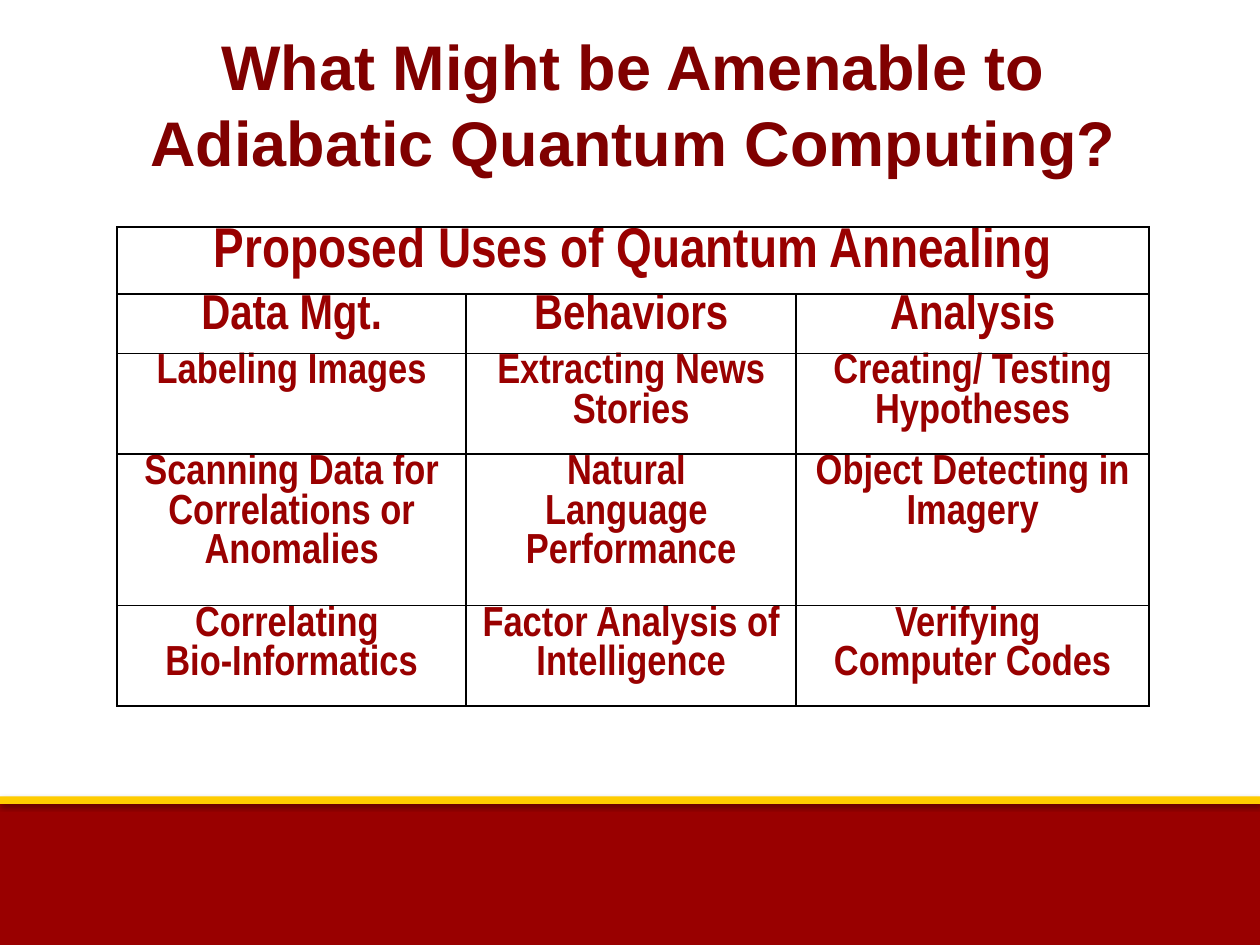
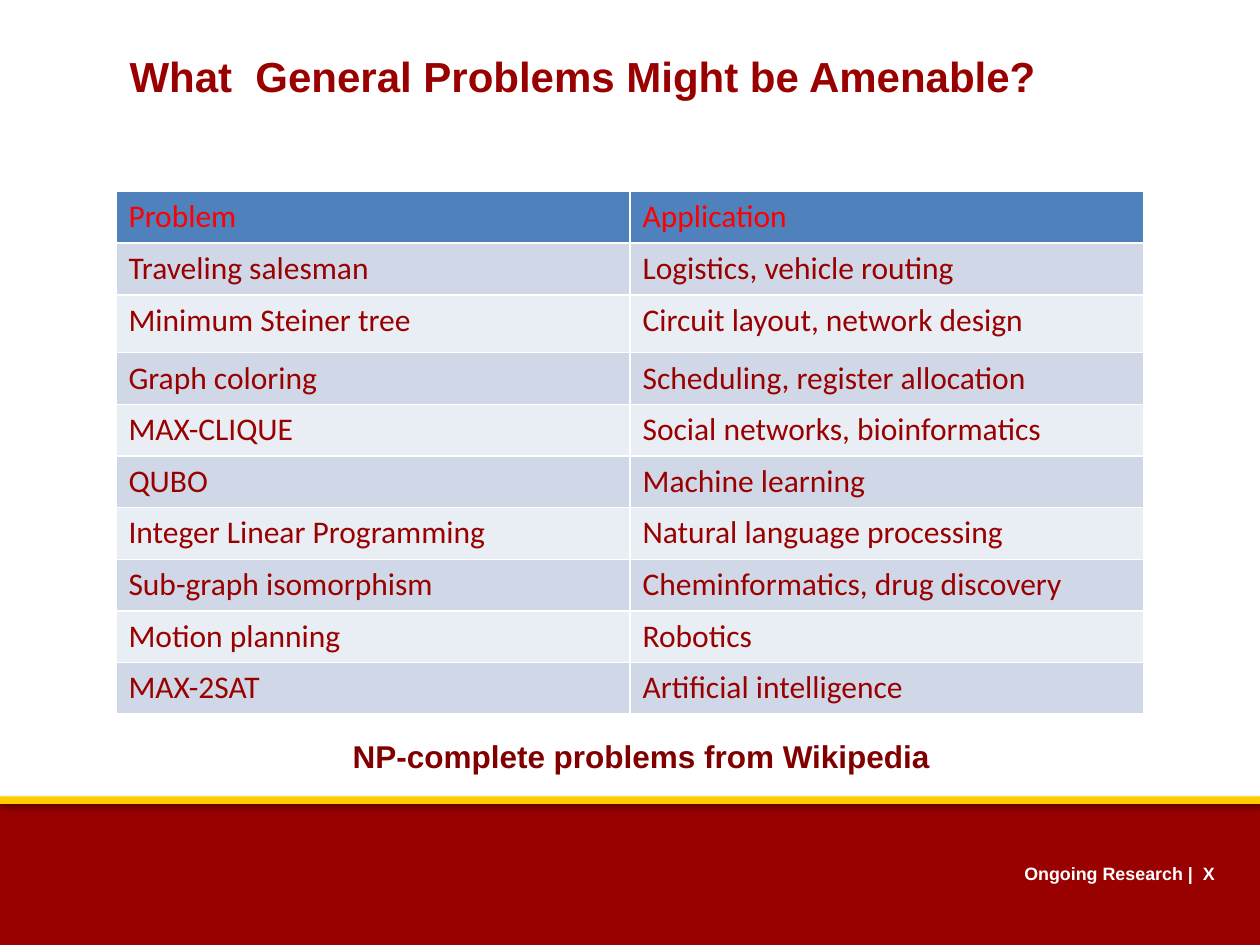
import pptx
import pptx.dml.color
import pptx.enum.text
import pptx.oxml
import pptx.util
from pptx.enum.shapes import MSO_SHAPE
from pptx.enum.text import PP_ALIGN
from pptx.util import Inches

CARDINAL = "990000"
MAROON = "800000"
GOLD = "FFCC00"
WHITE = "FFFFFF"
BLACK = "000000"
RED = "FF0000"
HEADER_BLUE = "4F81BD"
BAND_FILLS = ("D0D8E8", "E9EDF4")
NS = 'xmlns:a="http://schemas.openxmlformats.org/drawingml/2006/main"'

USES = [
    ["Proposed Uses of Quantum Annealing", "", ""],
    ["Data Mgt.", "Behaviors", "Analysis"],
    ["Labeling Images", "Extracting News Stories", "Creating/ Testing Hypotheses"],
    ["Scanning Data for Correlations or Anomalies",
     "Natural \vLanguage \vPerformance", "Object Detecting in Imagery"],
    ["Correlating \vBio-Informatics", "Factor Analysis of Intelligence",
     "Verifying \vComputer Codes"],
]
USES_HEIGHTS = [0.53, 0.47, 0.8, 1.2, 0.8]
USES_SIZES = [32, 28, 24, 24, 24]

PROBLEMS = [
    ["Problem", "Application"],
    ["Traveling salesman", "Logistics, vehicle routing"],
    ["Minimum Steiner tree", "Circuit layout, network design"],
    ["Graph coloring", "Scheduling, register allocation"],
    ["MAX-CLIQUE", "Social networks, bioinformatics"],
    ["QUBO", "Machine learning"],
    ["Integer Linear Programming", "Natural language processing"],
    ["Sub-graph isomorphism", "Cheminformatics, drug discovery"],
    ["Motion planning", "Robotics"],
    ["MAX-2SAT", "Artificial intelligence"],
]
PROBLEM_HEIGHTS = [0.46 if i == 2 else 0.41 for i in range(len(PROBLEMS))]


def rgb(hex_color):
    return pptx.dml.color.RGBColor.from_string(hex_color)


def write(p, text, size, color, font="Arial", bold=True, align=PP_ALIGN.LEFT):
    p.text = text
    p.alignment = align
    p.font.size = pptx.util.Pt(size)
    p.font.name = font
    p.font.bold = bold
    p.font.color.rgb = rgb(color)


def add_text(s, box, text, size, color, align=PP_ALIGN.LEFT):
    tf = s.shapes.add_textbox(*map(Inches, box)).text_frame
    tf.word_wrap = True
    write(tf.paragraphs[0], text, size, color, align=align)


def add_band(s, top, height, color, shadow_alpha, shadow_distance):
    """Full-width bar with a soft shadow below it; distance in points."""
    sp = s.shapes.add_shape(MSO_SHAPE.RECTANGLE, 0, Inches(top), Inches(10), Inches(height))
    sp.fill.solid()
    sp.fill.fore_color.rgb = rgb(color)
    sp.line.fill.background()
    sp.shadow.inherit = False
    effects = sp._element.spPr.find(pptx.oxml.ns.qn("a:effectLst"))
    effects.append(pptx.oxml.parse_xml(
        f'<a:outerShdw {NS} blurRad="{pptx.util.Pt(3.1)}" '
        f'dist="{pptx.util.Pt(shadow_distance)}" dir="5400000" rotWithShape="0">'
        f'<a:srgbClr val="{BLACK}"><a:alpha val="{shadow_alpha * 1000}"/></a:srgbClr>'
        '</a:outerShdw>'))


def add_slide(prs):
    s = prs.slides.add_slide(prs.slide_layouts[6])
    add_band(s, 6.35, 1.15, CARDINAL, 35, 1.8)
    add_band(s, 6.32, 0.06, GOLD, 38, 1.6)
    return s


def set_borders(cell, color):
    tc_pr = cell._tc.get_or_add_tcPr()
    for side in "LRTB":
        tc_pr.append(pptx.oxml.parse_xml(
            f'<a:ln{side} {NS} w="{pptx.util.Pt(1)}"><a:solidFill>'
            f'<a:srgbClr val="{color}"/></a:solidFill></a:ln{side}>'))


def add_grid(s, left, top, widths, heights, border):
    """Add a plain table with every cell bordered in one colour."""
    table = s.shapes.add_table(
        len(heights), len(widths), Inches(left), Inches(top),
        Inches(sum(widths)), Inches(sum(heights))).table
    table.first_row = table.horz_banding = False
    for column, width in zip(table.columns, widths):
        column.width = Inches(width)
    for row, height in zip(table.rows, heights):
        row.height = Inches(height)
    for cell in table.iter_cells():
        set_borders(cell, border)
    return table


def add_uses_table(s):
    table = add_grid(s, 0.93, 1.8, [2.77, 2.62, 2.8], USES_HEIGHTS, BLACK)
    table.cell(0, 0).merge(table.cell(0, 2))
    for i, (texts, size) in enumerate(zip(USES, USES_SIZES)):
        for j, text in enumerate(texts):
            cell = table.cell(i, j)
            cell.fill.background()
            cell.margin_left = cell.margin_right = Inches(0.07)
            cell.margin_top = cell.margin_bottom = 0
            if not cell.is_spanned:
                write(cell.text_frame.paragraphs[0], text, size, CARDINAL,
                      "Arial Narrow", align=PP_ALIGN.CENTER)


def add_problems_table(s):
    table = add_grid(s, 0.92, 1.52, [4.08, 4.08], PROBLEM_HEIGHTS, WHITE)
    for i, texts in enumerate(PROBLEMS):
        fill = BAND_FILLS[(i - 1) % 2] if i else HEADER_BLUE
        for j, text in enumerate(texts):
            cell = table.cell(i, j)
            cell.fill.solid()
            cell.fill.fore_color.rgb = rgb(fill)
            write(cell.text_frame.paragraphs[0], text, 18,
                  CARDINAL if i else RED, "Calibri", bold=False)


def main():
    prs = pptx.Presentation()
    prs.slide_width, prs.slide_height = Inches(10), Inches(7.5)

    s = add_slide(prs)
    add_text(s, (0.93, 0.17, 8.19, 1.31),
             "What Might be Amenable to Adiabatic Quantum Computing?",
             36, MAROON, PP_ALIGN.CENTER)
    add_uses_table(s)

    s = add_slide(prs)
    add_text(s, (7.96, 6.8, 1.78, 0.35), "Ongoing Research |  X", 10.2, WHITE, PP_ALIGN.RIGHT)
    add_text(s, (0.93, 0.35, 8.19, 0.5), "What  General Problems Might be Amenable?",
             24, CARDINAL)
    add_problems_table(s)
    add_text(s, (2.32, 5.8, 5.54, 0.4), "NP-complete problems from Wikipedia",
             18, MAROON, PP_ALIGN.CENTER)

    prs.save("out.pptx")


if __name__ == "__main__":
    main()
